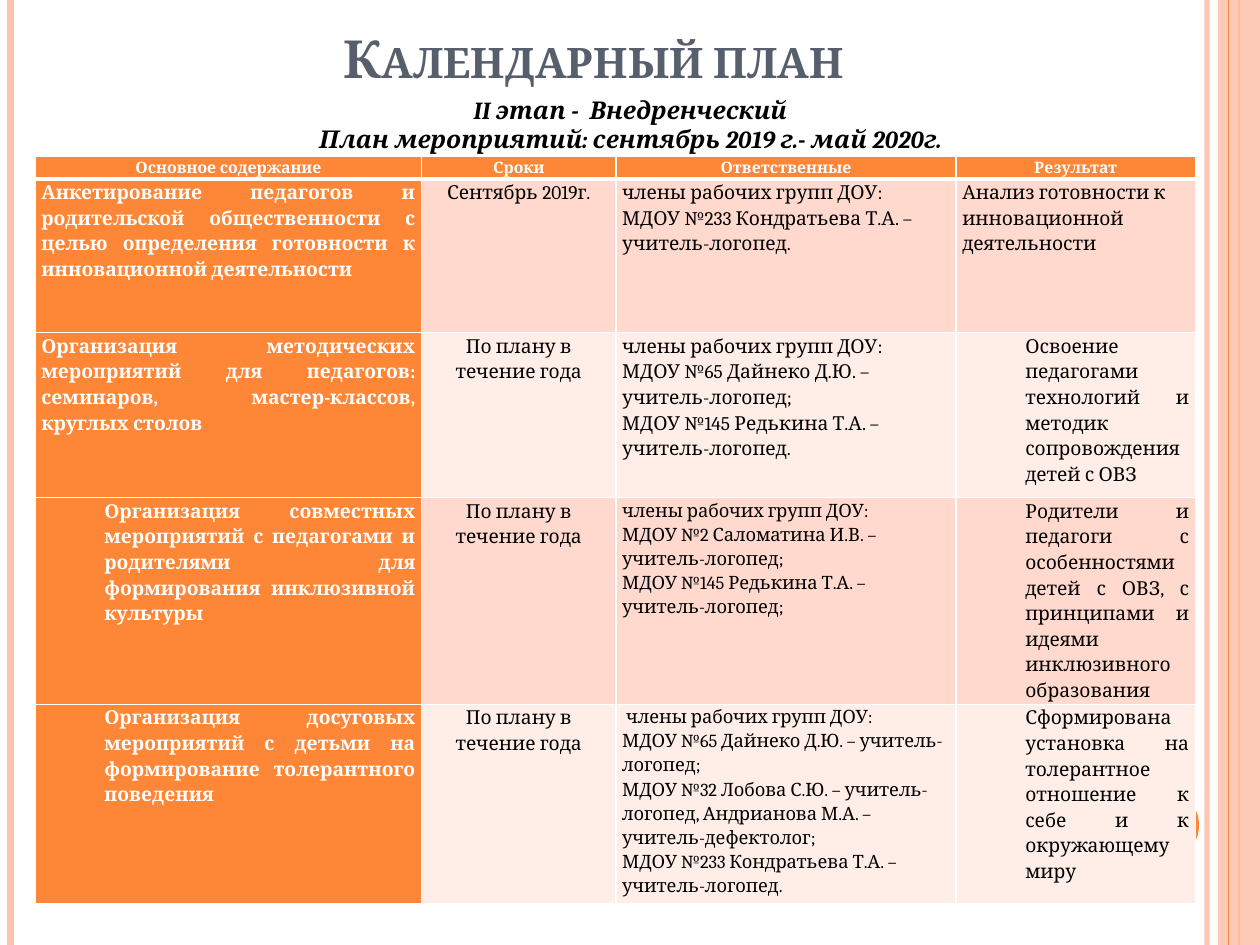
import pptx
import pptx.dml.color
import pptx.enum.shapes
import pptx.enum.text
import pptx.oxml
import pptx.oxml.ns
import pptx.util
from lxml import etree

Pt = pptx.util.Pt
RGBColor = pptx.dml.color.RGBColor
Align = pptx.enum.text.PP_ALIGN
Anchor = pptx.enum.text.MSO_ANCHOR
Shape = pptx.enum.shapes.MSO_SHAPE
qn = pptx.oxml.ns.qn

ORANGE = RGBColor(0xFE, 0x86, 0x37)
PEACH = RGBColor(0xFE, 0xC3, 0xAE)
BAND_DARK = RGBColor(0xFF, 0xD9, 0xCE)
BAND_LIGHT = RGBColor(0xFF, 0xED, 0xE8)
SLATE = RGBColor(0x57, 0x5F, 0x6D)
WHITE = RGBColor(0xFF, 0xFF, 0xFF)
BLACK = RGBColor(0, 0, 0)

SLIDE_WIDTH, SLIDE_HEIGHT = 720, 540
HANGING = 36
COLUMN_WIDTHS = [221, 110.9, 194.4, 136.8]
ROW_HEIGHTS = [13, 87.8, 94.3, 118.1, 113.8]
HEADERS = ["Основное содержание", "Сроки", "Ответственные", "Результат"]
GROUPS = "члены рабочих групп ДОУ:\n"
ALL_YEAR = "По плану в течение года"

ROWS = [
    ["Анкетирование педагогов и родительской общественности с целью "
     "определения готовности к инновационной деятельности",
     "Сентябрь 2019г.",
     GROUPS + "МДОУ №233 Кондратьева Т.А. – учитель-логопед.",
     "Анализ готовности к инновационной деятельности"],
    ["Организация методических мероприятий для педагогов: семинаров, "
     "мастер-классов, круглых столов",
     ALL_YEAR,
     GROUPS + "МДОУ №65 Дайнеко Д.Ю. – учитель-логопед;\n"
     "МДОУ №145 Редькина Т.А. – учитель-логопед.",
     "Освоение педагогами технологий и методик сопровождения детей с ОВЗ"],
    ["Организация совместных мероприятий с педагогами и родителями "
     "для формирования инклюзивной культуры",
     ALL_YEAR,
     GROUPS + "МДОУ №2 Саломатина И.В. – учитель-логопед;\n"
     "МДОУ №145 Редькина Т.А. – учитель-логопед;",
     "Родители и педагоги с особенностями детей с ОВЗ, с принципами "
     "и идеями инклюзивного образования"],
    ["Организация досуговых мероприятий с детьми на формирование "
     "толерантного поведения",
     ALL_YEAR,
     " " + GROUPS + "МДОУ №65 Дайнеко Д.Ю. – учитель-логопед;\n"
     "МДОУ №32 Лобова С.Ю. – учитель-логопед, Андрианова М.А. – "
     "учитель-дефектолог;\n"
     "МДОУ №233 Кондратьева Т.А. – учитель-логопед.",
     "Сформирована установка на толерантное отношение к себе "
     "и к окружающему миру"],
]


def write_text(frame, text, size, color=BLACK, bold=False, italic=False,
               align=Align.LEFT, indent=0, line_spacing=1.0, space_after=0,
               small_caps=False, font="Cambria"):
    """Fill a text frame, one paragraph for each line of text."""
    for index, line in enumerate(text.split("\n")):
        paragraph = frame.paragraphs[0] if index == 0 else frame.add_paragraph()
        paragraph.alignment = align
        paragraph.line_spacing = line_spacing
        paragraph.space_before = Pt(0)
        paragraph.space_after = Pt(space_after)
        if indent:
            properties = paragraph._p.get_or_add_pPr()
            properties.set("marL", str(Pt(indent)))
            properties.set("indent", "0")
        run = paragraph.add_run()
        run.text = line
        run.font.name = font
        run.font.size = Pt(size)
        run.font.bold = bold
        run.font.italic = italic
        run.font.color.rgb = color
        if small_caps:
            run._r.get_or_add_rPr().set("cap", "small")


def set_opacity(fill_parent, percent):
    color = next(fill_parent.iter(qn("a:srgbClr")))
    etree.SubElement(color, qn("a:alpha")).set("val", str(percent * 1000))


def set_borders(cell, bottom_width):
    properties = cell._tc.get_or_add_tcPr()
    widths = {"lnL": 1, "lnR": 1, "lnT": 1, "lnB": bottom_width}
    for index, (side, width) in enumerate(widths.items()):
        border = pptx.oxml.parse_xml(
            f'<a:{side} xmlns:a="http://schemas.openxmlformats.org/drawingml/2006/main"'
            f' w="{Pt(width)}"><a:solidFill><a:srgbClr val="{WHITE}"/>'
            f'</a:solidFill></a:{side}>')
        properties.insert(index, border)


class PlanSlide:
    """Holds the slide and draws its elements, with lengths in points."""

    def __init__(self, presentation):
        self.slide = presentation.slides.add_slide(presentation.slide_layouts[5])
        self.shapes = self.slide.shapes
        self.slide.background.fill.solid()
        self.slide.background.fill.fore_color.rgb = WHITE

    def vertical_line(self, x, color, width, opacity=100):
        line = self.shapes.add_connector(
            pptx.enum.shapes.MSO_CONNECTOR.STRAIGHT,
            Pt(x), 0, Pt(x), Pt(SLIDE_HEIGHT))
        line.line.color.rgb = color
        line.line.width = Pt(width)
        properties = line._element.spPr
        if opacity < 100:
            set_opacity(properties, opacity)
        etree.SubElement(properties, qn("a:effectLst"))

    def filled_shape(self, kind, left, top, width, height, color, opacity=100):
        shape = self.shapes.add_shape(kind, Pt(left), Pt(top), Pt(width), Pt(height))
        shape.shadow.inherit = False
        shape.fill.solid()
        shape.fill.fore_color.rgb = color
        shape.line.fill.background()
        if opacity < 100:
            set_opacity(shape._element.spPr, opacity)

    def title(self, text, left, top, width, height):
        title = self.shapes.title
        title.left, title.top = Pt(left), Pt(top)
        title.width, title.height = Pt(width), Pt(height)
        title.text_frame.vertical_anchor = Anchor.MIDDLE
        write_text(title.text_frame, text, 30, SLATE, bold=True,
                   align=Align.CENTER, small_caps=True)

    def subtitle(self, text, left, top, width, height):
        box = self.shapes.add_textbox(Pt(left), Pt(top), Pt(width), Pt(height))
        box.text_frame.word_wrap = False
        box.text_frame.vertical_anchor = Anchor.MIDDLE
        write_text(box.text_frame, text, 14, bold=True, italic=True,
                   align=Align.CENTER)

    def cell(self, cell, text, fill, bottom_width=1, **text_format):
        cell.margin_left = cell.margin_right = Pt(3.6)
        cell.margin_top = cell.margin_bottom = 0
        cell.fill.solid()
        cell.fill.fore_color.rgb = fill
        set_borders(cell, bottom_width)
        write_text(cell.text_frame, text, line_spacing=1.15, **text_format)

    def plan_table(self, left, top):
        table = self.shapes.add_table(
            len(ROW_HEIGHTS), len(COLUMN_WIDTHS), Pt(left), Pt(top),
            Pt(sum(COLUMN_WIDTHS)), Pt(sum(ROW_HEIGHTS))).table
        for column, width in zip(table.columns, COLUMN_WIDTHS):
            column.width = Pt(width)
        for row, height in zip(table.rows, ROW_HEIGHTS):
            row.height = Pt(height)

        for index, text in enumerate(HEADERS):
            self.cell(table.cell(0, index), text, ORANGE, bottom_width=3, size=9,
                      color=WHITE, bold=True, align=Align.CENTER, space_after=10)

        for number, (content, dates, people, result) in enumerate(ROWS, 1):
            band = BAND_DARK if number % 2 else BAND_LIGHT
            content_indent = HANGING if number > 2 else 0
            result_indent = HANGING if number > 1 else 0
            self.cell(table.cell(number, 0), content, ORANGE, size=11,
                      color=WHITE, bold=True, align=Align.JUSTIFY,
                      indent=content_indent, space_after=0 if content_indent else 10)
            self.cell(table.cell(number, 1), dates, band, size=11,
                      align=Align.CENTER, space_after=10)
            self.cell(table.cell(number, 2), people, band,
                      size=10.5 if number > 2 else 11)
            self.cell(table.cell(number, 3), result, band, size=11,
                      align=Align.JUSTIFY if result_indent else Align.LEFT,
                      indent=result_indent, space_after=0 if result_indent else 10)


def main():
    presentation = pptx.Presentation()
    presentation.slide_width = Pt(SLIDE_WIDTH)
    presentation.slide_height = Pt(SLIDE_HEIGHT)

    plan = PlanSlide(presentation)
    plan.vertical_line(689.8, PEACH, 3, opacity=93)
    plan.vertical_line(6, PEACH, 4.5)
    plan.vertical_line(708, ORANGE, 1.5)
    plan.filled_shape(Shape.RECTANGLE, 696, 0, 24, SLIDE_HEIGHT, PEACH, opacity=87)
    plan.vertical_line(702, ORANGE, 0.75)
    plan.filled_shape(Shape.OVAL, 642, 450, 43.2, 43.2, ORANGE)
    plan.plan_table(20, 89.3)
    plan.title("Календарный план ", 48, 5, 588, 55.4)
    plan.subtitle("II этап -  Внедренческий\n"
                  "План мероприятий: сентябрь 2019 г.- май 2020г.",
                  167, 50.4, 386.6, 41)
    presentation.save("out.pptx")


if __name__ == "__main__":
    main()
